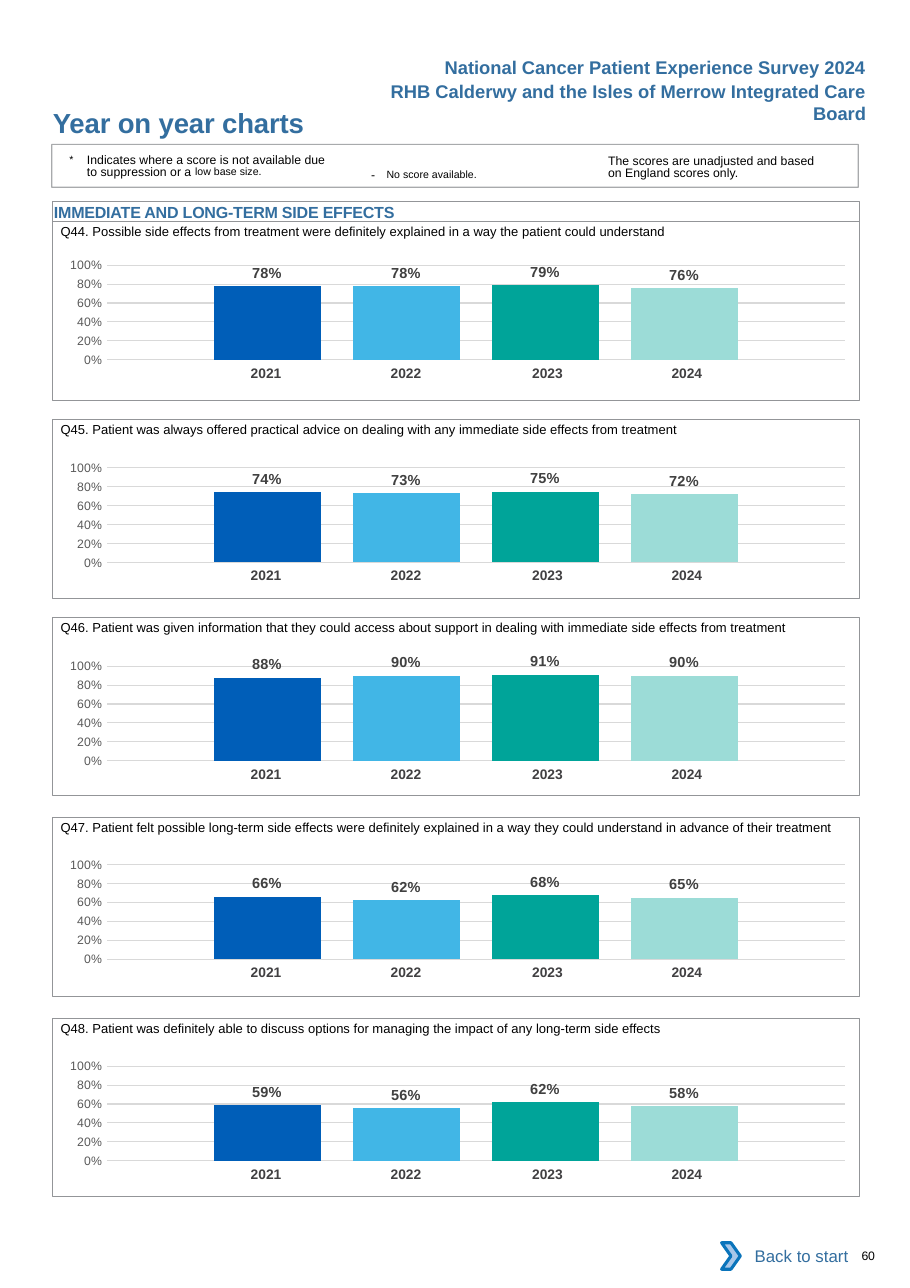
from lxml.etree import SubElement
from pptx import Presentation
from pptx.chart.data import CategoryChartData
from pptx.dml.color import RGBColor
from pptx.enum.chart import XL_CHART_TYPE as ChartType, XL_LABEL_POSITION as LabelPosition
from pptx.enum.chart import XL_TICK_MARK as TickMark
from pptx.enum.shapes import MSO_SHAPE as Preset
from pptx.enum.text import MSO_ANCHOR as Anchor, PP_ALIGN as Align
from pptx.oxml import parse_xml
from pptx.oxml.ns import nsdecls, qn
from pptx.util import Emu, Pt

COLORS = {
    "heading": "336E9F", "text": "000000", "frame": "939598", "year": "414042",
    "score": "404040", "axis": "595959", "grid": "D9D9D9", "white": "FFFFFF",
    "arrow": "A8C7E9", "arrow_edge": "0A74BB",
    "2021": "005EB8", "2022": "41B6E6", "2023": "00A499", "2024": "9CDCD7",
}
YEARS = ["2021", "2022", "2023", "2024"]
YEAR_WIDTHS = [127, 127, 134, 127]
YEAR_RIGHT_INSETS = [0, 0, 4, 12]
QUESTIONS = [
    (201, 222, "Q44. Possible side effects from treatment were definitely explained in a way "
     "the patient could understand", [0.78, 0.78, 0.79, 0.76]),
    (381, 406, "Q45. Patient was always offered practical advice on dealing with any immediate "
     "side effects from treatment", [0.74, 0.73, 0.75, 0.72]),
    (560, 586, "Q46. Patient was given information that they could access about support in "
     "dealing with immediate side effects from treatment", [0.88, 0.90, 0.91, 0.90]),
    (742, 766, "Q47. Patient felt possible long-term side effects were definitely explained in "
     "a way they could understand in advance of their treatment", [0.66, 0.62, 0.68, 0.65]),
    (924, 949, "Q48. Patient was definitely able to discuss options for managing the impact of "
     "any long-term side effects", [0.59, 0.56, 0.62, 0.58]),
]


def px(length):
    """Turn px, at 100 to the inch, into EMU."""
    return Emu(length * 9144)


def color(name):
    """Look up a named colour."""
    return RGBColor.from_string(COLORS[name])


def style_font(font, size, color_name, bold=False):
    """Set Arial with a size, colour and weight."""
    font.name, font.size, font.bold = "Arial", Pt(size), bold
    font.color.rgb = color(color_name)


def set_insets(target, left=0, top=0, right=0, bottom=0):
    """Set the inner margins of a text frame or a cell."""
    target.margin_left, target.margin_top = px(left), px(top)
    target.margin_right, target.margin_bottom = px(right), px(bottom)


def add_run(paragraph, words, size=None, **attributes):
    """Add a run with optional size and raw character attributes."""
    run = paragraph.add_run()
    run.text = words
    if size:
        run.font.size = Pt(size)
    for key, value in attributes.items():
        run._r.get_or_add_rPr().set(key, str(value))


def add_text(slide, box, words, size, color_name="text", bold=False, align=Align.LEFT,
             insets=(0, 0, 0, 0), wrap=True, spacing=0):
    """Add a one-paragraph text box and return the paragraph."""
    frame = slide.shapes.add_textbox(*map(px, box)).text_frame
    frame.word_wrap = wrap
    set_insets(frame, *insets)
    paragraph = frame.paragraphs[0]
    paragraph.alignment = align
    style_font(paragraph.font, size, color_name, bold)
    if words:
        add_run(paragraph, words, spc=spacing)
    return paragraph


def add_preset(slide, preset, box, fill=None, line=None, width=0.5):
    """Add a preset shape without a shadow."""
    shape = slide.shapes.add_shape(preset, *map(px, box))
    shape.shadow.inherit = False
    if fill:
        shape.fill.solid()
        shape.fill.fore_color.rgb = color(fill)
    else:
        shape.fill.background()
    if line:
        shape.line.color.rgb = color(line)
        shape.line.width = Pt(width)
    else:
        shape.line.fill.background()
    return shape


def add_label(shape, words, size, align, bold=False, spacing=0):
    """Write a heading-coloured label inside a shape."""
    shape.text_frame.vertical_anchor = Anchor.MIDDLE
    paragraph = shape.text_frame.paragraphs[0]
    paragraph.alignment = align
    style_font(paragraph.font, size, "heading", bold)
    add_run(paragraph, words, spc=spacing)


def add_years(slide, top):
    """Add the row of year names under a chart."""
    years = slide.shapes.add_table(1, 4, px(173), px(top), px(515), px(27)).table
    years.first_row = years.horz_banding = False
    for index, year in enumerate(YEARS):
        years.columns[index].width = px(YEAR_WIDTHS[index])
        cell = years.cell(0, index)
        cell.fill.background()
        set_insets(cell, 10, 5, YEAR_RIGHT_INSETS[index], 5)
        cell.text = year
        paragraph = cell.text_frame.paragraphs[0]
        paragraph.alignment = Align.CENTER
        style_font(paragraph.font, 9, "year", True)


def set_plot_layout(chart):
    """Fix the inner plot area and make the chart background clear."""
    plot_area = chart._chartSpace.find(".//" + qn("c:plotArea"))
    for old in plot_area.findall(qn("c:layout")):
        plot_area.remove(old)
    plot_area.insert(0, parse_xml(
        f'<c:layout {nsdecls("c")}><c:manualLayout><c:layoutTarget val="inner"/>'
        '<c:xMode val="edge"/><c:yMode val="edge"/><c:x val="0.079"/><c:y val="0.145"/>'
        '<c:w val="0.915"/><c:h val="0.666"/></c:manualLayout></c:layout>'))
    chart._chartSpace.find(qn("c:chart")).addnext(parse_xml(
        f'<c:spPr {nsdecls("c", "a")}><a:noFill/><a:ln><a:noFill/></a:ln></c:spPr>'))


def add_scores(slide, top, scores):
    """Add the column chart of yearly scores for a question."""
    data = CategoryChartData(number_format="0%")
    data.categories = ["1"]
    for number, score in enumerate(scores, 1):
        data.add_series(f"Series {number}", [score])
    chart = slide.shapes.add_chart(ChartType.COLUMN_CLUSTERED, px(39), px(top),
                                   px(732), px(129), data).chart
    chart.has_legend = chart.has_title = False
    chart.font.name, chart.font.size = "Calibri", Pt(10)
    chart.font.color.rgb = color("text")
    set_plot_layout(chart)
    chart.category_axis.visible = False
    axis = chart.value_axis
    axis.minimum_scale, axis.maximum_scale, axis.major_unit = 0, 1, 0.2
    axis.major_tick_mark = axis.minor_tick_mark = TickMark.NONE
    axis.format.line.fill.background()
    axis.major_gridlines.format.line.color.rgb = color("grid")
    axis.major_gridlines.format.line.width = Pt(0.75)
    axis.tick_labels.number_format = "0%"
    axis.tick_labels.number_format_is_linked = False
    style_font(axis.tick_labels.font, 8, "axis")
    plot = chart.plots[0]
    plot.gap_width, plot.overlap, plot.vary_by_categories = 200, -30, False
    for year, series in zip(YEARS, plot.series):
        series.format.fill.solid()
        series.format.fill.fore_color.rgb = color(year)
        labels = series.data_labels
        labels.show_value, labels.position = True, LabelPosition.OUTSIDE_END
        labels.number_format, labels.number_format_is_linked = "0%", False
        style_font(labels.font, 9.5, "score", True)


def add_question(slide, panel_top, chart_top, question, scores):
    """Add one framed question with its chart and years."""
    add_years(slide, chart_top + 105)
    add_scores(slide, chart_top, scores)
    add_text(slide, (55, panel_top - 7, 726, 24), question, 8.5, insets=(0, 9, 0, 0))
    add_preset(slide, Preset.RECTANGLE, (48, panel_top, 732, 162), line="frame")


def add_notes_key(slide):
    """Add the framed key that explains the symbols."""
    basis = add_text(slide, (552, 138, 196, 27), "The scores are unadjusted and based on "
                     "England scores only.", 8, insets=(0, 3, 0, 0))
    dash = add_text(slide, (327, 141, 183, 24), "", 8, insets=(10, 5, 10, 5))
    add_run(dash, "- ", spc=260)
    add_run(dash, "No score available.", 12, baseline=3000)
    star = add_text(slide, (63, 138, 240, 27), "", 8, insets=(0, 3, 0, 0))
    add_run(star, "*\t", 12, baseline=3000)
    add_run(star, "Indicates where a score is not available due to suppression or a ")
    add_run(star, "low base size.", 12, baseline=7000)
    star._p.get_or_add_pPr().set("marL", str(px(16)))
    star._p.get_or_add_pPr().set("indent", str(px(-16)))
    for paragraph in (basis, star):
        paragraph.line_spacing = Pt(8.1)
        paragraph.space_before = Pt(2.5)
    frame = add_preset(slide, Preset.RECTANGLE, (47, 131, 732, 39), line="frame", width=0.75)
    SubElement(frame._element.find(".//" + qn("a:srgbClr")), qn("a:alpha"), val="80000")


def main():
    """Build the page of year on year charts."""
    deck = Presentation()
    deck.slide_width, deck.slide_height = px(826), px(1169)
    slide = deck.slides.add_slide(deck.slide_layouts[6])
    headers = [(307, 68, 489, "RHB Calderwy and the Isles of Merrow Integrated Care Board"),
               (392, 46, 404, "National Cancer Patient Experience Survey 2024")]
    for left, top, width, words in headers:
        add_text(slide, (left, top, width, 30), words, 12, "heading", True, Align.RIGHT,
                 (10, 5, 10, 5), wrap=False)
    add_text(slide, (48, 96, 450, 30), "Year on year charts", 18, "heading", True, spacing=-10)
    add_notes_key(slide)
    section = add_preset(slide, Preset.RECTANGLE, (48, 183, 732, 18), line="frame")
    set_insets(section.text_frame, 1, 1)
    add_label(section, "IMMEDIATE AND LONG-TERM SIDE EFFECTS", 10.5, Align.LEFT, True, -10)
    for question in QUESTIONS:
        add_question(slide, *question)
    back = add_preset(slide, Preset.RECTANGLE, (662, 1119, 118, 42), fill="white")
    add_label(back, "Back to start", 11, Align.RIGHT)
    add_preset(slide, Preset.CHEVRON, (655, 1128, 17, 24), "arrow", "arrow_edge", 2)
    add_text(slide, (782, 1133, 41, 13), "60", 8, spacing=-20)
    deck.save("out.pptx")


if __name__ == "__main__":
    main()
